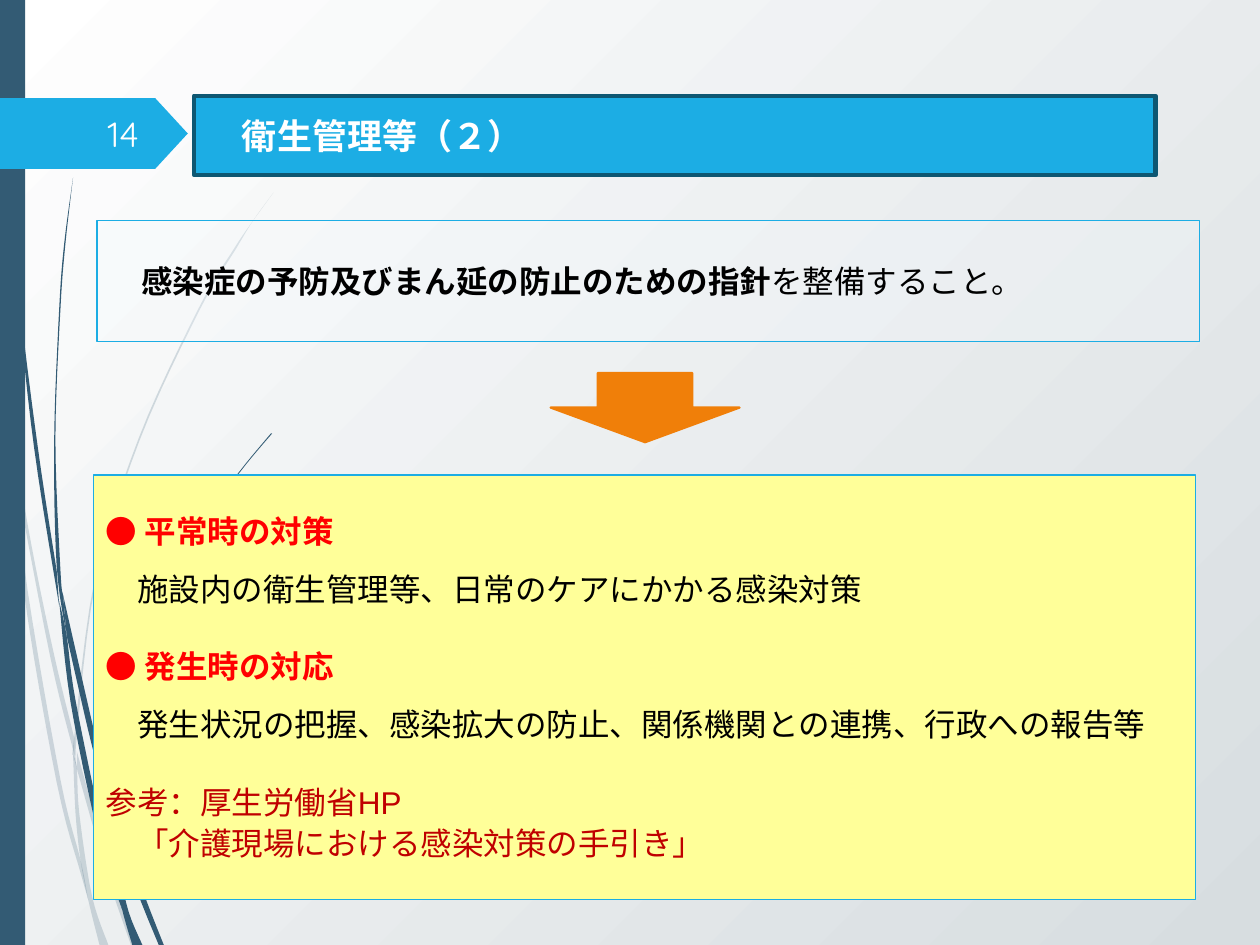
"""Build the hygiene management slide on a grid of 100 columns by 75 rows."""
import lxml.etree
import pptx
import pptx.dml.color
import pptx.enum.shapes
import pptx.enum.text
import pptx.oxml
import pptx.oxml.ns
import pptx.util

COLORS = {"navy": "335B74", "blue": "1CADE4", "edge": "0E5772", "yellow": "FFFF99",
          "orange": "F07F09", "ice": "F4FAFF", "red": "FF0000", "wine": "C00000",
          "black": "000000", "white": "FFFFFF", "digit": "FEFFFF", "gray": "D7DDE0"}
RGB = {k: pptx.dml.color.RGBColor.from_string(v) for k, v in COLORS.items()}
CELL = pptx.util.Inches(0.1)
SHAPE = pptx.enum.shapes.MSO_SHAPE
ALIGN = pptx.enum.text.PP_ALIGN
qn = pptx.oxml.ns.qn


def smooth(points, steps=6):
    pts = [points[0], *points, points[-1]]
    out = [points[0]]
    for a, b, c, d in zip(pts, pts[1:], pts[2:], pts[3:]):
        for i in range(1, steps + 1):
            t = i / steps
            out.append(tuple(
                (2 * q + (r - p) * t + (2 * p - 5 * q + 4 * r - u) * t ** 2
                 + (3 * q - p - 3 * r + u) * t ** 3) / 2
                for p, q, r, u in zip(a, b, c, d)))
    return out


def add_run(p, text, color, **fmt):
    r = p.add_run()
    r.text = text
    r.font.color.rgb = RGB[color]
    for k, v in fmt.items():
        setattr(r.font, k, v)


prs = pptx.Presentation()
prs.slide_width, prs.slide_height = 100 * CELL, 75 * CELL
s = prs.slides.add_slide(prs.slide_layouts[1])
title, body = s.shapes.title, s.placeholders[1]

fill = s.background.fill
fill.gradient()
fill.gradient_angle = 315
for stop, color, pos in zip(fill.gradient_stops, ("white", "gray"), (0, 1)):
    stop.color.rgb = RGB[color]
    stop.position = pos

pale_wisps = [
    ([(0, 28.2), (0.6, 32.2), (0.8, 35)], [(0.7, 34.4), (0, 29.9)]),
    ([(1, 34.5), (2.5, 43.3), (4.3, 52), (5.9, 58.6)],
     [(5.9, 59.9), (4, 52.2), (1.2, 37.6)]),
    ([(6.1, 59.6), (6.4, 60.7), (8.8, 69.2), (10.8, 75)],
     [(10.4, 75), (8.5, 69.4), (6.1, 61)]),
    ([(0.8, 35), (1.2, 37.6), (2.2, 46.9), (4.8, 61.9), (6.4, 68.3), (7, 71.4)],
     [(6.4, 69.3), (4.5, 62.1), (1.9, 47), (0.8, 35)]),
    ([(5.8, 59.9), (6.1, 61), (6.3, 64.6), (7.3, 71.1), (8.6, 75)],
     [(7.9, 75), (7, 71.4), (6.4, 68.3), (6, 64.6), (5.8, 59.9)]),
    ([(21.7, 15.3), (20.1, 17.5), (18.6, 19.7), (15.8, 24.4), (11, 34.8),
      (7.5, 46.1), (5.9, 58.4), (5.8, 59.9)],
     [(6.1, 61), (6.1, 58.4), (7.6, 46.2), (11.1, 34.9), (15.9, 24.5),
      (18.7, 19.8), (20.1, 17.5), (21.7, 15.3)]),
]
dark_wisps = [
    ([(0.2, 0), (0.5, 11), (1.4, 23.3), (2.7, 35.5), (4.7, 48.1)],
     [(4.5, 45.3), (3, 35.5), (1.5, 23.2), (0.6, 10.9), (0.3, 0)]),
    ([(5, 47.2), (7.7, 59), (8.8, 63.1)], [(8.8, 64.5), (7.3, 59.2), (5.3, 50.5)]),
    ([(9.1, 64.1), (9.4, 64.9), (11.3, 70.6), (13, 75)],
     [(12.6, 75), (10.9, 70.8), (9.1, 65.6)]),
    ([(4.7, 47.7), (5.3, 50.5), (6, 55.6), (8.1, 65.7), (9.1, 69.1), (9.7, 72.2)],
     [(9.2, 70.8), (7.7, 65.9), (5.6, 55.7), (4.7, 47.7)]),
    ([(5.8, 14.1), (5.1, 19.3), (4.7, 24.5), (4.3, 34.9), (4.5, 44.9), (5.3, 50.5)],
     [(5, 47.2), (4.8, 45.3), (4.4, 34.9), (4.8, 24.5), (5.2, 19.3), (5.8, 14.1)]),
    ([(21.5, 34.4), (19.1, 37.3), (16.8, 40.5), (12.9, 47.4), (10.1, 55.1), (8.8, 63.1)],
     [(9.1, 64.1), (9.1, 63.3), (10.3, 55.2), (13.1, 47.6), (16.9, 40.6),
      (19.1, 37.4), (21.6, 34.4)]),
    ([(8.8, 64.5), (9.1, 65.6), (10, 71.6), (11.3, 75)],
     [(10.5, 75), (9.7, 72.2), (9.1, 69.1), (8.8, 64.5)]),
]
see_through = []
for wisps, alpha in ((pale_wisps, 20), (dark_wisps, 100)):
    for edges in wisps:
        pts = [(x * CELL, y * CELL) for edge in edges for x, y in smooth(edge)]
        fb = s.shapes.build_freeform(*pts[0], scale=1.0)
        fb.add_line_segments(pts[1:], close=True)
        sp = fb.convert_to_shape()
        sp.fill.solid()
        sp.fill.fore_color.rgb = RGB["navy"]
        sp.line.fill.background()
        sp.shadow.inherit = False
        see_through.append((sp, alpha))

panels = {
    "stripe": (SHAPE.RECTANGLE, (0, 0, 2, 75), "navy", None, 0),
    "tag": (SHAPE.PENTAGON, (0, 7.8, 14.9, 5.6), "blue", None, 0),
    "measures": (body, (7.4, 37.7, 87.5, 33.7), "yellow", "blue", 0.75),
    "arrow": (SHAPE.DOWN_ARROW, (43.7, 29.6, 15, 5.5), "orange", "orange", 1.25),
    "heading": (title, (15.4, 7.6, 76.3, 6.3), "blue", "edge", 2.5),
    "notice": (SHAPE.RECTANGLE, (7.7, 17.5, 87.5, 9.6), "ice", "blue", 0.75),
}
made = {}
for name, (kind, box, color, edge, width) in panels.items():
    box = [pptx.util.Emu(round(v * CELL)) for v in box]
    if kind in (title, body):
        sp = kind
        sp.left, sp.top, sp.width, sp.height = box
        sp.element.getparent().append(sp.element)
    else:
        sp = s.shapes.add_shape(kind, *box)
        sp.shadow.inherit = False
    if kind is title:
        sp.element.spPr.find(qn("a:xfrm")).set("flipH", "1")
        geom = lxml.etree.SubElement(sp.element.spPr, qn("a:prstGeom"), prst="homePlate")
        lxml.etree.SubElement(geom, qn("a:avLst"))
    sp.fill.solid()
    sp.fill.fore_color.rgb = RGB[color]
    if edge:
        sp.line.color.rgb = RGB[edge]
        sp.line.width = pptx.util.Pt(width)
    else:
        sp.line.fill.background()
    made[name] = sp
made["tag"].adjustments[0] = 0.46
see_through.append((made["notice"], 25))
for sp, alpha in see_through:
    clr = sp.element.spPr.find(qn("a:solidFill"))[0]
    lxml.etree.SubElement(clr, qn("a:alpha"), val=str(alpha * 1000))

made["number"] = s.shapes.add_textbox(
    *[pptx.util.Emu(round(v * CELL)) for v in (5.6, 8.6, 6.4, 4)])
frame = {"word_wrap": True, "auto_size": pptx.enum.text.MSO_AUTO_SIZE.NONE,
         "vertical_anchor": pptx.enum.text.MSO_ANCHOR.MIDDLE}
for name, left in (("number", 1), ("heading", 3.8), ("notice", 3.5), ("measures", 1)):
    tf = made[name].text_frame
    for k, v in frame.items():
        setattr(tf, k, v)
    tf.margin_left = round(left * CELL)
    tf.paragraphs[0].alignment = ALIGN.RIGHT if name == "number" else ALIGN.LEFT

big = {"size": pptx.util.Pt(20), "name": "Quicksand"}
text = {"size": pptx.util.Pt(18), "name": "Quicksand"}
add_run(made["number"].text_frame.paragraphs[0], "14", "digit", **big)
p = title.text_frame.paragraphs[0]
add_run(p, "衛生管理等", "white", **{**big, "name": "Noto Sans CJK JP", "bold": True})
add_run(p, "（２）", "white", **big, bold=True)
p = made["notice"].text_frame.paragraphs[0]
add_run(p, "感染症の予防及びまん延の防止のための指針", "black", **text, bold=True)
add_run(p, "を整備すること。", "black", **text, bold=False)

lines = [
    ("● 平常時の対策", "red", True, 0, 12, 21),
    ("施設内の衛生管理等、日常のケアにかかる感染対策", "black", False, 2.5, 23, 21),
    ("● 発生時の対応", "red", True, 0, 12, 21),
    ("発生状況の把握、感染拡大の防止、関係機関との連携、行政への報告等", "black", False, 2.5, 24, 21),
    ("参考：厚生労働省HP", "wine", False, 0, 0, 21),
    ("「介護現場における感染対策の手引き」", "wine", False, 2.5, 0, 23),
]
tf = body.text_frame
for i, (words, color, bold, indent, after, height) in enumerate(lines):
    p = tf.add_paragraph() if i else tf.paragraphs[0]
    spacing = {"space_before": 0, "space_after": after, "line_spacing": height}
    for k, v in spacing.items():
        setattr(p, k, pptx.util.Pt(v))
    pPr = p._p.get_or_add_pPr()
    pPr.set("marL", str(round(indent * CELL)))
    pPr.set("indent", "0")
    lxml.etree.SubElement(pPr, qn("a:buNone"))
    name = "Arial" if color == "wine" else "Quicksand"
    add_run(p, words, color, **{**text, "name": name, "bold": bold})

prs.save("out.pptx")
